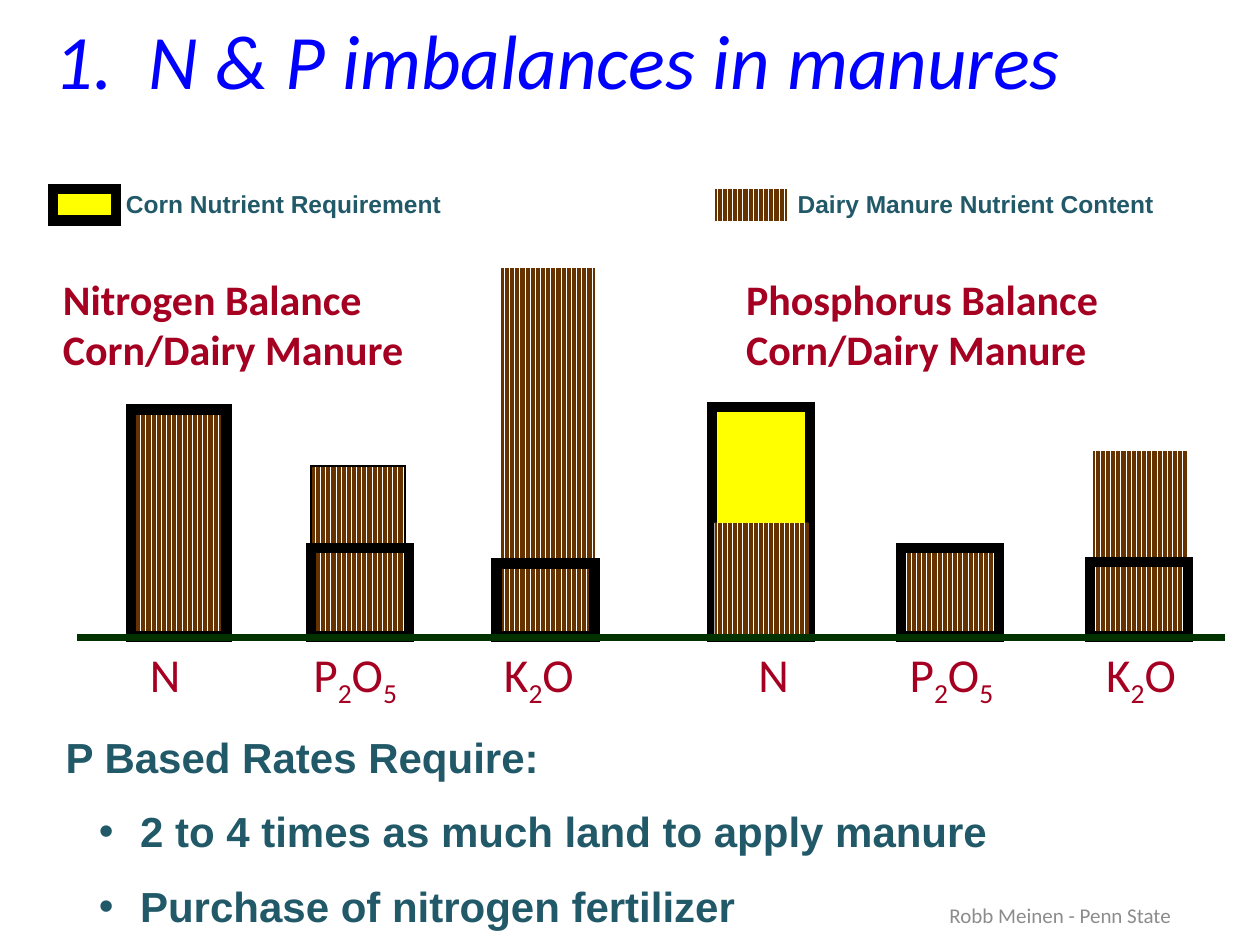
from pptx import Presentation
from pptx import util as u
from pptx.dml.color import RGBColor
from pptx.enum import dml, shapes, text
from pptx.oxml.ns import qn
from lxml import etree

COLORS = {"title": "0000FF", "heading": "A50021", "body": "215968", "credit": "8C8C8C",
          "corn": "FFFF00", "manure": "663300", "gap": "FFFFFF", "border": "000000",
          "axis": "003300"}
FORMATS = {
    "title": {"name": "Calibri", "size": u.Pt(44), "italic": True},
    "heading": {"name": "Calibri", "size": u.Pt(24), "bold": True},
    "nutrient": {"name": "Calibri", "size": u.Pt(27)},
    "legend": {"name": "Arial", "size": u.Pt(14), "bold": True},
    "body": {"name": "Arial", "size": u.Pt(24), "bold": True},
    "credit": {"name": "Calibri", "size": u.Pt(12)},
}
BASELINE = 12.83
NUTRIENTS = {"N": 0.69, "P2O5": 2.08, "K2O": 1.73}
NITROGEN = {
    "heading": (0, "Nitrogen Balance"),
    "bars": [(5, 1.9, 3.43, "manure", 1), (8.81, 1.9, 7.42, "manure", 0),
             (5, 1.98, 1.78, None, 6), (8.74, 1.98, 1.47, None, 6),
             (1.37, 1.93, 4.57, "manure", 6)],
    "labels": (1.75, 5.05, 8.89),
}
PHOSPHORUS = {
    "heading": (0.69, "Phosphorus Balance"),
    "bars": [(0, 1.98, 4.62, "corn", 6), (0.05, 1.9, 2.29, "manure", 0),
             (3.81, 1.98, 1.78, "manure", 2), (7.67, 1.9, 3.73, "manure", 0),
             (3.81, 1.98, 1.78, None, 6), (7.62, 1.98, 1.5, None, 6)],
    "labels": (0.94, 3.99, 7.95),
}


def rgb(key):
    """Return the named colour."""
    return RGBColor.from_string(COLORS[key])


def style(font, kind, color):
    """Apply a named text format and colour to a font."""
    for attribute, value in FORMATS[kind].items():
        setattr(font, attribute, value)
    font.color.rgb = rgb(color)


def place(shape, *box):
    """Move a placeholder to a box in centimetres."""
    for attribute, value in zip(("left", "top", "width", "height"), box):
        setattr(shape, attribute, u.Cm(value))


def add_text(slide, box, lines, kind, color, wrap=True):
    """Add a text box without margins and return its frame."""
    frame = slide.shapes.add_textbox(*map(u.Cm, box)).text_frame
    settings = {"margin_left": 0, "margin_top": 0, "margin_right": 0, "margin_bottom": 0,
                "word_wrap": wrap, "text": "\n".join(lines)}
    for attribute, value in settings.items():
        setattr(frame, attribute, value)
    for paragraph in frame.paragraphs:
        style(paragraph.font, kind, color)
    return frame


def add_bar(slide, box, filling, border):
    """Add a corn, manure or open bar with a border in points."""
    bar = slide.shapes.add_shape(shapes.MSO_SHAPE.RECTANGLE, *map(u.Cm, box))
    bar.shadow.inherit = False
    if filling == "manure":
        bar.fill.patterned()
        bar.fill.pattern = dml.MSO_PATTERN.DARK_VERTICAL
        bar.fill.fore_color.rgb = rgb("manure")
        bar.fill.back_color.rgb = rgb("gap")
    elif filling:
        bar.fill.solid()
        bar.fill.fore_color.rgb = rgb(filling)
    else:
        bar.fill.background()
    if border:
        bar.line.color.rgb = rgb("border")
        bar.line.width = u.Pt(border)
        outline = bar._element.spPr.find(qn("a:ln"))
        etree.SubElement(outline, qn("a:miter"), lim="800000")
    else:
        bar.line.fill.background()


def add_nutrient(slide, box, formula):
    """Add a nutrient formula with its digits as subscripts."""
    paragraph = add_text(slide, box, [""], "nutrient", "heading", False).paragraphs[0]
    for symbol in formula:
        run = paragraph.add_run()
        run.text = symbol
        style(run.font, "nutrient", "heading")
        if symbol.isdigit():
            run.font._element.set("baseline", "-25000")


def add_title(slide, left, top, width, height):
    """Fill the title with a tab after its number."""
    title = slide.shapes.title
    place(title, left, top, width, height)
    title.text_frame.text = "1.\tN & P imbalances in manures"
    title.text_frame.vertical_anchor = text.MSO_ANCHOR.MIDDLE
    title.text_frame.auto_size = text.MSO_AUTO_SIZE.NONE
    paragraph = title.text_frame.paragraphs[0]
    paragraph.alignment = text.PP_ALIGN.LEFT
    stops = etree.SubElement(paragraph._p.get_or_add_pPr(), qn("a:tabLst"))
    etree.SubElement(stops, qn("a:tab"), pos=str(u.Cm(1.9)), algn="l")
    style(paragraph.font, "title", "title")


def add_legend(slide, left, top, swatch, label, filling, border):
    """Add a swatch and its label, each given as offset or width in centimetres."""
    add_bar(slide, (left, top, swatch, 0.64), filling, border)
    offset, width, words = label
    add_text(slide, (left + offset, top, width, 0.61), [words], "legend", "body")


def add_balance(slide, left, baseline, panel):
    """Add one panel of bars with heading and nutrient labels."""
    for offset, width, height, filling, border in panel["bars"]:
        add_bar(slide, (left + offset, baseline - height, width, height), filling, border)
    offset, heading = panel["heading"]
    add_text(slide, (left + offset, 5.51, 8.6, 2.06), [heading, "Corn/Dairy Manure"],
             "heading", "heading")
    for offset, (formula, width) in zip(panel["labels"], NUTRIENTS.items()):
        add_nutrient(slide, (left + offset, baseline + 0.17, width, 1.14), formula)


def add_axis(slide, left, top, width):
    """Add the ground line below the bars."""
    axis = slide.shapes.add_connector(shapes.MSO_CONNECTOR.STRAIGHT, u.Cm(left), u.Cm(top),
                                      u.Cm(left + width), u.Cm(top))
    axis.line.color.rgb = rgb("axis")
    axis.line.width = u.Pt(4)
    etree.SubElement(axis._element.spPr, qn("a:effectLst"))


def add_requirements(slide, left, top, width, height):
    """Fill the body with the lead line and its bullets."""
    body = slide.placeholders[1]
    place(body, left, top, width, height)
    frame = body.text_frame
    frame.text = "\n".join(["P Based Rates Require:",
                            "2 to 4 times as much land to apply manure",
                            "Purchase of nitrogen fertilizer"])
    frame.auto_size = text.MSO_AUTO_SIZE.NONE
    for index, paragraph in enumerate(frame.paragraphs):
        paragraph.level = min(index, 1)
        paragraph.space_before = u.Pt(14 if index else 0)
        properties = paragraph._p.get_or_add_pPr()
        properties.set("marL", str(u.Cm(1.5 if index else 0)))
        properties.set("indent", str(u.Cm(-0.83 if index else 0)))
        if index:
            etree.SubElement(properties, qn("a:buFont"), typeface="Arial")
            etree.SubElement(properties, qn("a:buChar"), char="•")
        else:
            etree.SubElement(properties, qn("a:buNone"))
        style(paragraph.font, "body", "body")


def add_credit(slide, left, top, width, height):
    """Add the centred author line."""
    frame = add_text(slide, (left, top, width, height), ["Robb Meinen - Penn State"],
                     "credit", "credit")
    frame.vertical_anchor = text.MSO_ANCHOR.MIDDLE
    frame.paragraphs[0].alignment = text.PP_ALIGN.CENTER


def main():
    """Build the slide and save it."""
    deck = Presentation()
    deck.slide_width, deck.slide_height = u.Cm(25.4), u.Cm(19.05)
    slide = deck.slides.add_slide(deck.slide_layouts[1])
    add_title(slide, 0.84, 0.03, 22.86, 2.31)
    add_balance(slide, 1.27, BASELINE, NITROGEN)
    add_balance(slide, 14.35, BASELINE, PHOSPHORUS)
    add_legend(slide, 1.07, 3.81, 1.27, (1.47, 6.55, "Corn Nutrient Requirement"), "corn", 6)
    add_legend(slide, 14.4, 3.81, 1.47, (1.68, 7.5, "Dairy Manure Nutrient Content"),
               "manure", 0)
    add_axis(slide, 1.55, BASELINE + 0.02, 23.14)
    add_requirements(slide, 1.07, 14.61, 23.29, 3.33)
    add_credit(slide, 17.35, 17.93, 8.05, 1.02)
    deck.save("out.pptx")


if __name__ == "__main__":
    main()
